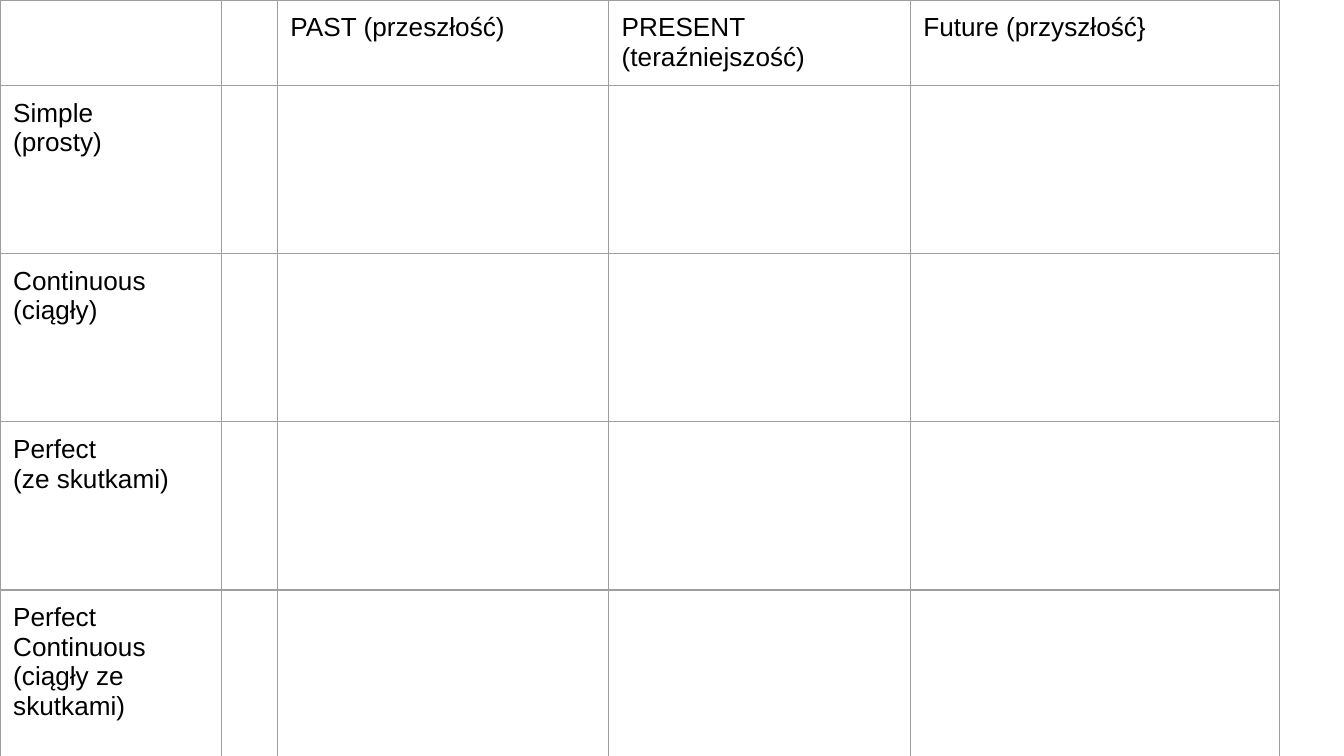
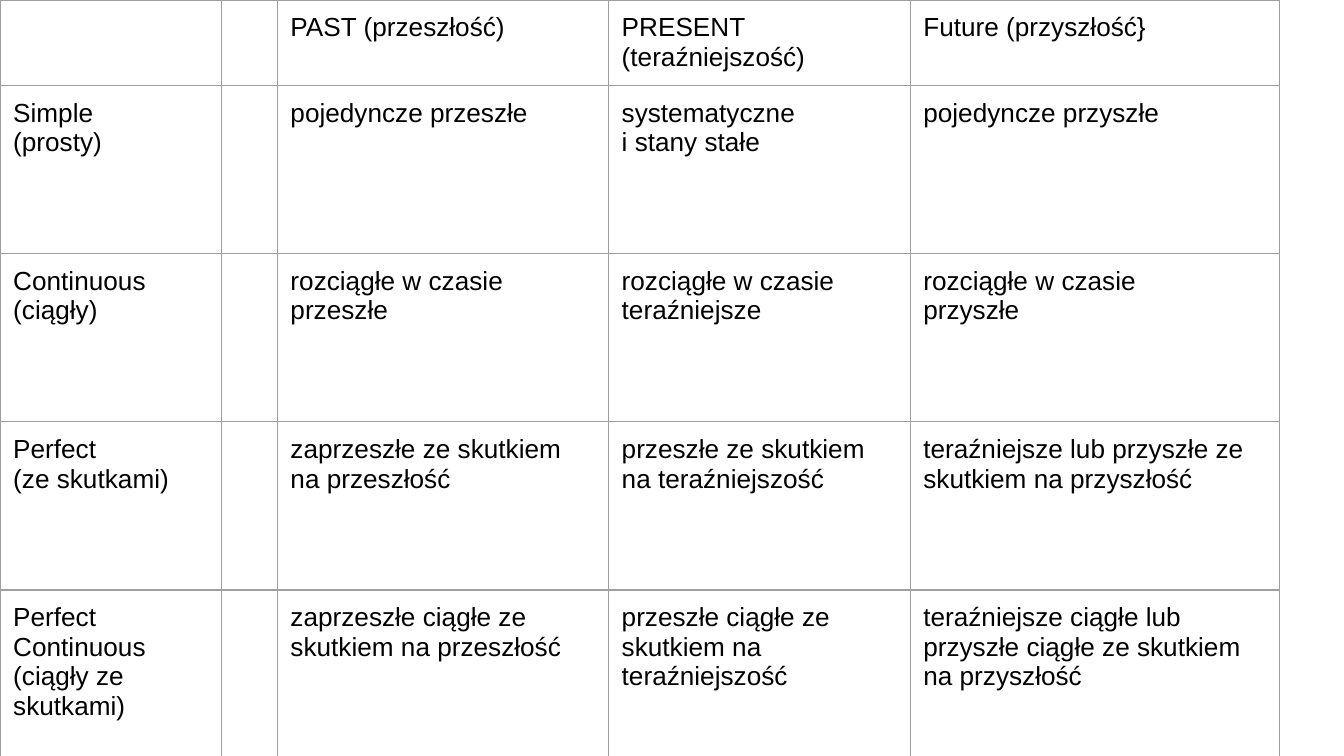
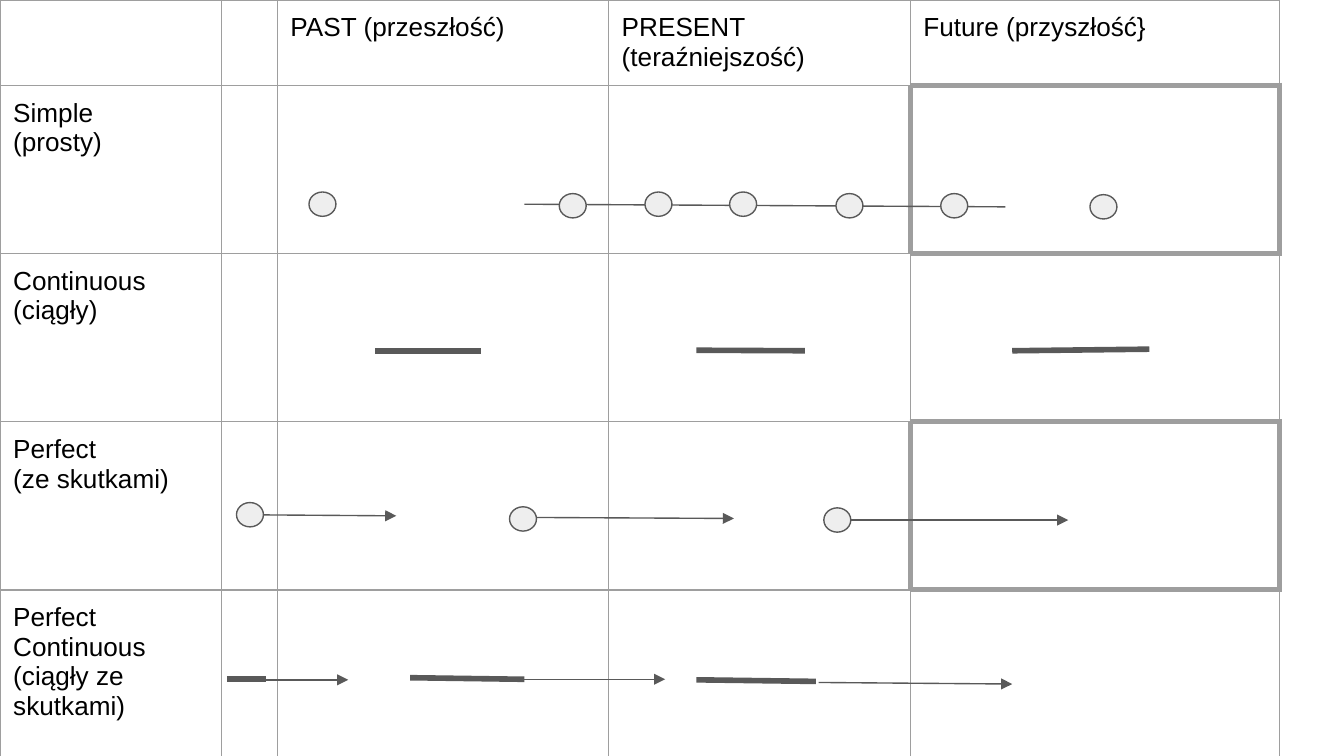
from lxml import etree
from pptx import Presentation
from pptx import util as u
from pptx.dml.color import RGBColor
from pptx.enum import shapes
from pptx.oxml import ns

BLACK = RGBColor(0x00, 0x00, 0x00)
GRID = RGBColor(0x9E, 0x9E, 0x9E)
STROKE = RGBColor(0x59, 0x59, 0x59)
DOT_FILL = RGBColor(0xEE, 0xEE, 0xEE)

THIN, THICK = 0.75, 3
COLS = (4.18, 1.06, 6.26, 5.7, 6.98)
ROWS = (1.57,) + (3.18,) * 4
INSET = 0.25
DOT_W, DOT_H = 0.51, 0.46
SIDES = {"L": (0, -1), "R": (0, 1), "T": (-1, 0), "B": (1, 0)}

TENSES = ("PAST (przeszłość)", "PRESENT (teraźniejszość)", "Future (przyszłość}")
ASPECTS = (
    "Simple\n(prosty)",
    "Continuous\n(ciągły)",
    "Perfect\n(ze skutkami)",
    "Perfect Continuous\n(ciągły ze skutkami)",
)
NO_MEANINGS = (("",) * 3,) * 4
MEANINGS = (
    ("pojedyncze przeszłe", "systematyczne\ni stany stałe", "pojedyncze przyszłe"),
    tuple(f"rozciągłe w czasie\n{t}" for t in ("przeszłe", "teraźniejsze", "przyszłe")),
    (
        "zaprzeszłe ze skutkiem na przeszłość",
        "przeszłe ze skutkiem na teraźniejszość",
        "teraźniejsze lub przyszłe ze skutkiem na przyszłość",
    ),
    (
        "zaprzeszłe ciągłe ze skutkiem na przeszłość",
        "przeszłe ciągłe ze skutkiem na teraźniejszość",
        "teraźniejsze ciągłe lub przyszłe ciągłe ze skutkiem na przyszłość",
    ),
)

HABIT_LINE = (9.91, 3.86, 19, 3.91)
SIMPLE_DOTS = (
    (5.84, 3.63), (10.57, 3.66), (12.19, 3.63), (13.79, 3.63),
    (15.8, 3.66), (17.78, 3.66), (20.6, 3.68),
)
CONTINUOUS_BARS = (
    (7.09, 6.63, 9.09, 6.63), (13.16, 6.62, 15.21, 6.63), (19.13, 6.63, 21.72, 6.6),
)
PERFECT_ARROWS = (
    (4.62, 9.73, 7.49, 9.75), (9.88, 9.78, 13.87, 9.8), (15.8, 9.83, 20.19, 9.83),
)
PERFECT_DOTS = ((4.47, 9.5), (9.63, 9.58), (15.57, 9.6))
PERFECT_CONTINUOUS_BARS = (
    (4.29, 12.83, 5.03, 12.83), (7.75, 12.81, 9.91, 12.84), (13.16, 12.85, 15.42, 12.88),
)
PERFECT_CONTINUOUS_ARROWS = (
    (4.93, 12.85, 6.58, 12.85), (9.7, 12.84, 12.57, 12.84), (15.47, 12.9, 19.13, 12.93),
)


def write(tf, content, size=14, font="Arial", color=BLACK):
    for i, line in enumerate(content.split("\n")):
        p = tf.paragraphs[0] if i == 0 else tf.add_paragraph()
        r = p.add_run()
        r.text = line
        r.font.size = u.Pt(size)
        r.font.name = font
        r.font.color.rgb = color


def set_border(cell, side, width):
    ln = etree.SubElement(cell._tc.get_or_add_tcPr(), ns.qn(f"a:ln{side}"), w=str(u.Pt(width)))
    fill = etree.SubElement(ln, ns.qn("a:solidFill"))
    etree.SubElement(fill, ns.qn("a:srgbClr"), val=str(GRID))


class Deck:
    def __init__(self):
        self.prs = Presentation()
        self.prs.slide_width, self.prs.slide_height = u.Cm(25.4), u.Cm(14.29)
        self.slide = None

    def new_slide(self):
        self.slide = self.prs.slides.add_slide(self.prs.slide_layouts[6])

    def tense_table(self, meanings, framed=()):
        size = u.Cm(sum(COLS)), u.Cm(sum(ROWS))
        table = self.slide.shapes.add_table(len(ROWS), len(COLS), 0, 0, *size).table
        table.first_row = table.horz_banding = False
        for col, width in zip(table.columns, COLS):
            col.width = u.Cm(width)
        for row, height in zip(table.rows, ROWS):
            row.height = u.Cm(height)
        texts = [("", "", *TENSES)] + [(a, "", *m) for a, m in zip(ASPECTS, meanings)]
        for i, row in enumerate(texts):
            for j, content in enumerate(row):
                self.cell(table, i, j, content, framed)

    def cell(self, table, i, j, content, framed):
        cell = table.cell(i, j)
        cell.margin_left = cell.margin_right = u.Cm(INSET)
        cell.margin_top = cell.margin_bottom = u.Cm(INSET)
        for side, (di, dj) in SIDES.items():
            heavy = (i, j) in framed or (i + di, j + dj) in framed
            set_border(cell, side, THICK if heavy else THIN)
        cell.fill.background()
        if content:
            write(cell.text_frame, content)

    def dot(self, x, y):
        sp = self.slide.shapes.add_shape(
            shapes.MSO_SHAPE.OVAL, u.Cm(x), u.Cm(y), u.Cm(DOT_W), u.Cm(DOT_H))
        sp.shadow.inherit = False
        sp.fill.solid()
        sp.fill.fore_color.rgb = DOT_FILL
        sp.line.color.rgb = STROKE
        sp.line.width = u.Pt(THIN)

    def line(self, points, width=THIN, arrow=False):
        cxn = self.slide.shapes.add_connector(
            shapes.MSO_CONNECTOR.STRAIGHT, *(u.Cm(v) for v in points))
        cxn.line.color.rgb = STROKE
        cxn.line.width = u.Pt(width)
        if arrow:
            etree.SubElement(cxn.line._get_or_add_ln(), ns.qn("a:tailEnd"), type="triangle")
        etree.SubElement(cxn._element.spPr, ns.qn("a:effectLst"))

    def dots(self, places):
        for place in places:
            self.dot(*place)

    def lines(self, segments, **style):
        for points in segments:
            self.line(points, **style)


def main():
    deck = Deck()
    for meanings in (NO_MEANINGS, MEANINGS):
        deck.new_slide()
        deck.tense_table(meanings)

    deck.new_slide()
    deck.tense_table(NO_MEANINGS, framed=((1, 4), (3, 4)))
    deck.line(HABIT_LINE)
    deck.dots(SIMPLE_DOTS)
    deck.lines(CONTINUOUS_BARS, width=THICK)
    deck.lines(PERFECT_ARROWS, arrow=True)
    deck.dots(PERFECT_DOTS)
    deck.lines(PERFECT_CONTINUOUS_BARS, width=THICK)
    deck.lines(PERFECT_CONTINUOUS_ARROWS, arrow=True)
    deck.prs.save("out.pptx")


if __name__ == "__main__":
    main()
